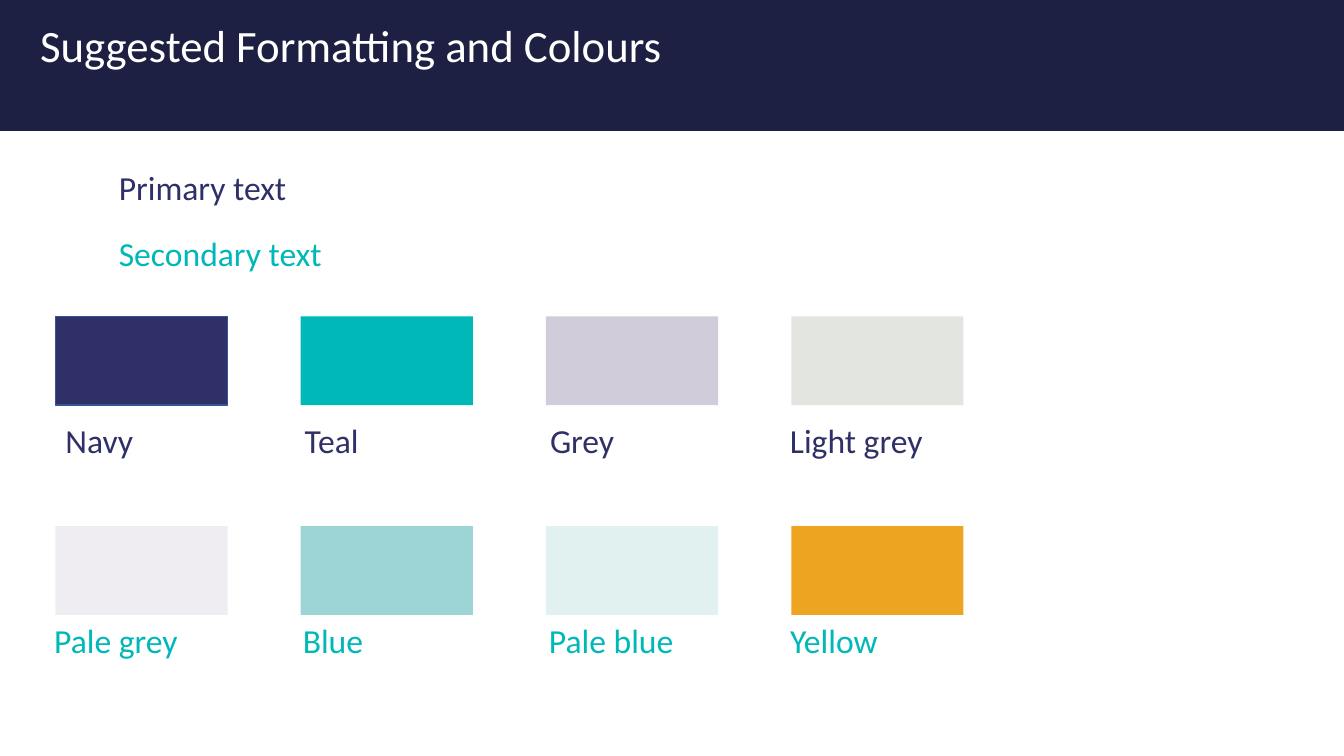
from pptx import Presentation
from pptx.dml.color import RGBColor
from pptx.enum.shapes import MSO_SHAPE
from pptx.enum.text import MSO_AUTO_SIZE
from pptx.util import Pt

RECT = MSO_SHAPE.RECTANGLE
GROW = MSO_AUTO_SIZE.SHAPE_TO_FIT_TEXT
NAVY, TEAL, WHITE = "303069", "00B8B8", "FFFFFF"

ROWS = [
    (226, 70.6, NAVY, [
        ("Navy", NAVY, 0, 63.4),
        ("Teal", TEAL, -4.2, 53.3),
        ("Grey", "D0CCD9", -4.2, 61.2),
        ("Light grey", "E3E6E0", -8, 110.2),
    ]),
    (375.8, 63.4, TEAL, [
        ("Pale grey", "EFEDF1", -8, 103.7),
        ("Blue", "9DD5D6", -5.6, 58.3),
        ("Pale blue", "E0F1F0", -5, 104.4),
        ("Yellow", "ECA421", -8, 77.8),
    ]),
]


def paint(hue):
    return RGBColor.from_string(hue)


def block(slide, left, top, width, height, hue, edge=None):
    shape = slide.shapes.add_shape(RECT, Pt(left), Pt(top), Pt(width), Pt(height))
    shape.shadow.inherit = False
    shape.fill.solid()
    shape.fill.fore_color.rgb = paint(hue)
    if edge:
        shape.line.color.rgb = paint(edge)
        shape.line.width = Pt(1)
    else:
        shape.line.fill.background()


def label(slide, left, top, width, height, text, hue, size=24, wrap=False):
    frame = slide.shapes.add_textbox(Pt(left), Pt(top), Pt(width), Pt(height)).text_frame
    frame.word_wrap = wrap
    if not wrap:
        frame.auto_size = GROW
    para = frame.paragraphs[0]
    run = para.add_run()
    run.text = text
    for key, value in {"name": "Calibri", "size": Pt(size)}.items():
        setattr(run.font, key, value)
    run.font.color.rgb = paint(hue)
    return para


def header(slide, left, top, width, height):
    block(slide, left, top, width, height, "1D2042")
    para = label(slide, left + 21.6, top + 13.7, width - 42.7, 71.3,
                 "Suggested Formatting and Colours", WHITE, 32, True)
    para.line_spacing = 0.9


def samples(slide, left, top, width, height):
    label(slide, left, top, width, height, "Primary text", NAVY)
    label(slide, left, top + 46.8, width, height, "Secondary text", TEAL)


def swatches(slide, left, top, width, height, drop, ink, items):
    step = 175.2
    for col, (name, hue, shift, span) in enumerate(items):
        x = left + col * step
        edge = "325491" if name == "Navy" else None
        block(slide, x, top, width, height, hue, edge)
        label(slide, x + shift, top + drop, span, 36, name, ink)


def main():
    deck = Presentation()
    deck.slide_width, deck.slide_height = Pt(960), Pt(540)
    slide = deck.slides.add_slide(deck.slide_layouts[6])
    header(slide, 0, 0, 960, 93.6)
    samples(slide, 77.8, 116, 166, 36)
    for top, drop, ink, items in ROWS:
        swatches(slide, 39.6, top, 123, 63.4, drop, ink, items)
    deck.save("out.pptx")


if __name__ == "__main__":
    main()
